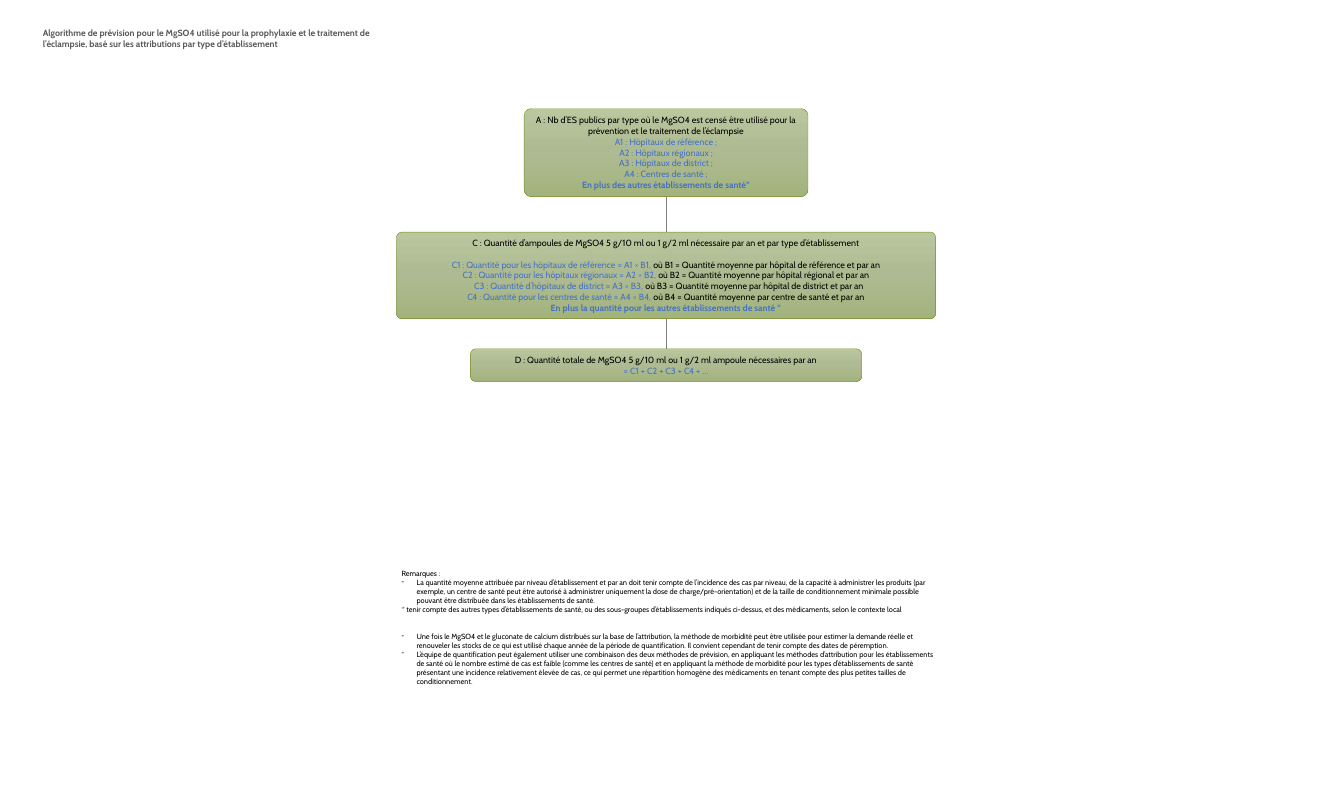
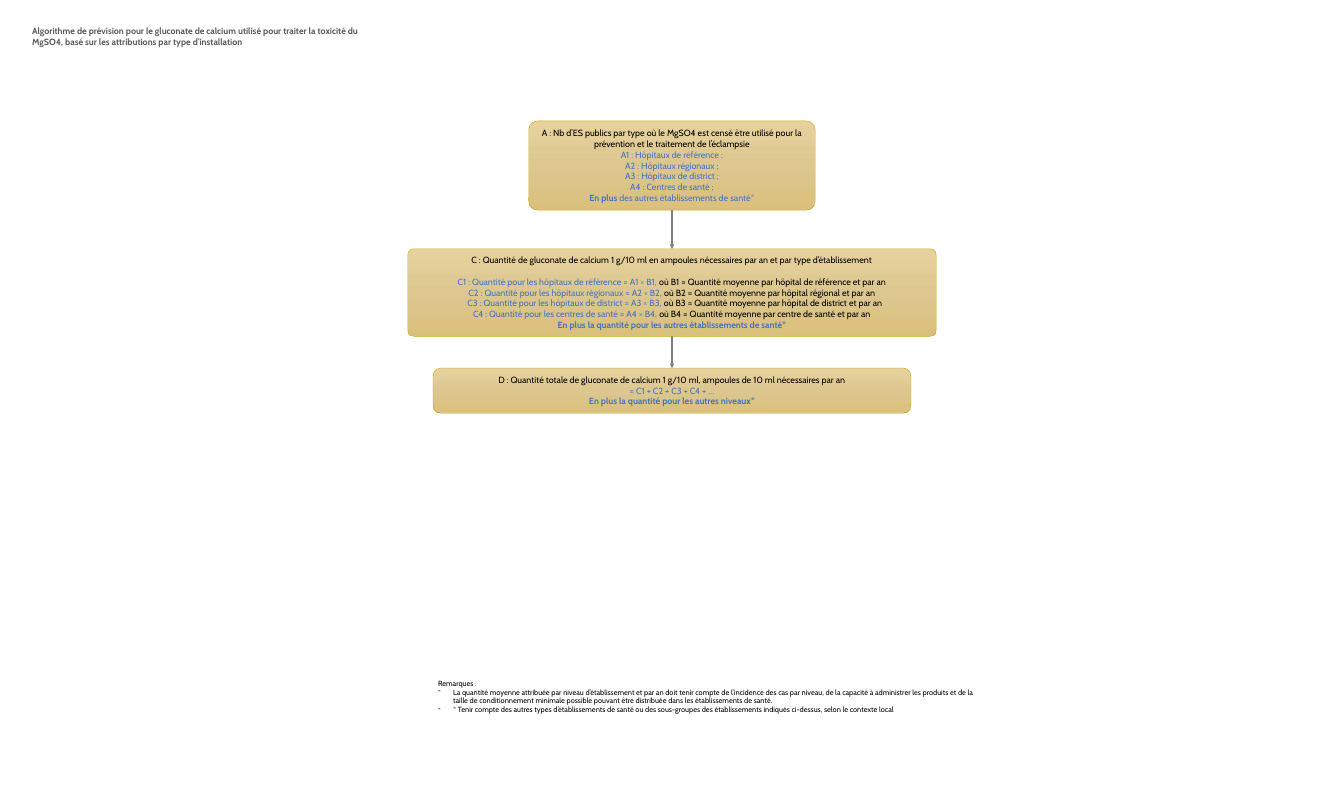
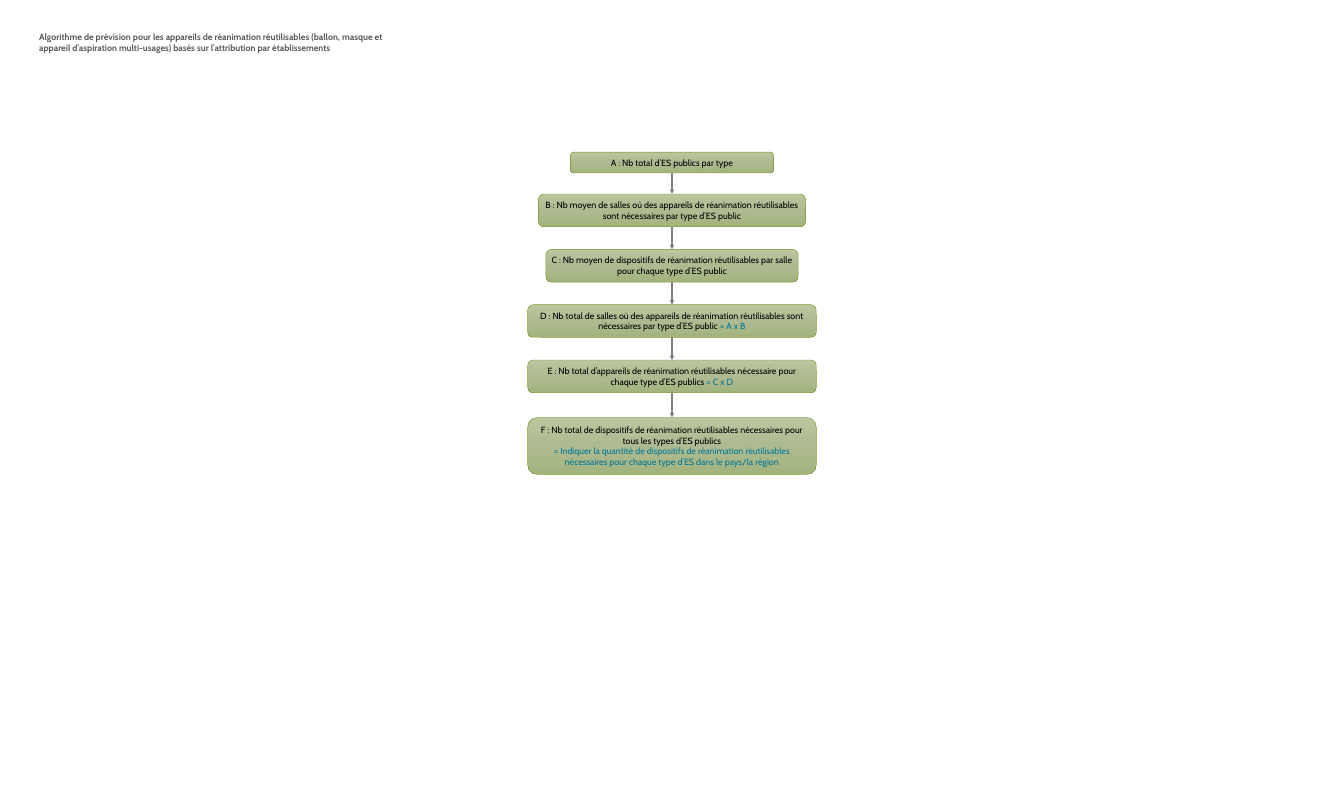
import copy

import pptx
import pptx.dml.color
import pptx.enum.shapes
import pptx.enum.text
import pptx.oxml.ns
import pptx.util
from lxml import etree

Inches, Pt = pptx.util.Inches, pptx.util.Pt
ALIGN = pptx.enum.text.PP_ALIGN
ANCHOR = pptx.enum.text.MSO_ANCHOR
qn = pptx.oxml.ns.qn

FONT = "Cabin"
HUES = {"ink": "000000", "blue": "4472C4", "teal": "007698",
        "title": "595959", "arrow": "808080"}
SKINS = {"green": (("BAC69E", "AEBB92", "A3B37D"), "788E1E"),
         "gold": (("E7D19D", "DDC790", "DAC07C"), "C2A204")}


def rgb(code):
    return pptx.dml.color.RGBColor.from_string(code)


def row(text, hue="ink", bold=False, **opts):
    return [(text, hue, bold)], opts


def mix(*runs, **opts):
    return [(*run, False)[:3] for run in runs], opts


class Deck:
    """Holds the deck style and the current slide."""

    def __init__(self):
        self.file = pptx.Presentation()
        self.file.slide_width = Inches(25)
        self.file.slide_height = Inches(15)

    def page(self, title, left, top, width):
        self.slide = self.file.slides.add_slide(self.file.slide_layouts[6])
        self.text(left, top, width, 0.5, [row(title, "title", True)], 12)

    def text(self, left, top, width, height, rows, size=10):
        box = self.slide.shapes.add_textbox(*map(Inches, (left, top, width, height)))
        self.typeset(box.text_frame, rows, size, ALIGN.LEFT)

    def typeset(self, frame, rows, size, align):
        frame.word_wrap = True
        for i, (runs, opts) in enumerate(rows):
            para = frame.paragraphs[0] if i == 0 else frame.add_paragraph()
            para.alignment = align
            para.space_before = Pt(opts.get("before", 0))
            para.space_after = Pt(opts.get("after", 0))
            para.font.name, para.font.size = FONT, Pt(size)
            for text, hue, bold in runs:
                run = para.add_run()
                run.text = text
                run.font.bold = bold
                run.font.color.rgb = rgb(HUES[hue])
            self.indent(para, opts)

    def indent(self, para, opts):
        props = para._p.get_or_add_pPr()
        if "left" in opts:
            props.set("marL", str(Inches(opts["left"])))
        if opts.get("dash"):
            props.set("marL", str(Inches(0.28)))
            props.set("indent", str(Inches(-0.28)))
            mark = etree.Element(qn("a:buChar"), char="-")
            props.find(qn("a:defRPr")).addprevious(mark)

    def box(self, mid, top, width, height, rows, skin, bend=0.17):
        shape = self.slide.shapes.add_shape(
            pptx.enum.shapes.MSO_SHAPE.ROUNDED_RECTANGLE,
            *map(Inches, (mid - width / 2, top, width, height)))
        shape.adjustments[0] = bend
        shape.shadow.inherit = False
        tones, edge = SKINS[skin]
        self.shade(shape.fill, shape._element.spPr, tones)
        shape.line.color.rgb = rgb(edge)
        shape.line.width = Pt(0.5)
        frame = shape.text_frame
        frame.vertical_anchor = ANCHOR.MIDDLE
        frame.margin_left = frame.margin_right = Inches(0.07)
        frame.margin_top = frame.margin_bottom = Inches(0.07)
        self.typeset(frame, rows, 12, ALIGN.CENTER)
        return shape

    def shade(self, fill, props, tones):
        fill.gradient()
        fill.gradient_angle = 270
        first = props.find(".//" + qn("a:gs"))
        first.addnext(copy.deepcopy(first))
        for i, (stop, tone) in enumerate(zip(fill.gradient_stops, tones)):
            stop.position = i / 2
            stop.color.rgb = rgb(tone)

    def link(self, upper, lower, head):
        line = self.slide.shapes.add_connector(
            pptx.enum.shapes.MSO_CONNECTOR.STRAIGHT, 0, 0, 0, 0)
        line.begin_connect(upper, 2)
        line.end_connect(lower, 0)
        line.line.color.rgb = rgb(HUES["arrow"])
        line.line.width = Pt(1.5)
        props = line._element.spPr
        if head:
            etree.SubElement(props.find(qn("a:ln")), qn("a:tailEnd"), type="triangle")
        etree.SubElement(props, qn("a:effectLst"))

    def chain(self, mid, steps, skin, head=True):
        boxes = [self.box(mid, *step[:4], skin, *step[4:]) for step in steps]
        for upper, lower in zip(boxes, boxes[1:]):
            self.link(upper, lower, head)


SITES = ["Hôpitaux de référence", "Hôpitaux régionaux",
         "Hôpitaux de district", "Centres de santé"]
MEANS = ["hôpital de référence", "hôpital régional",
         "hôpital de district", "centre de santé"]
SUM = row("= C1 + C2 + C3 + C4 + …", "blue")
NOTE = row("Remarques :")


def sites(last):
    head = row("A : Nb d’ES publics par type où le MgSO4 est censé être utilisé "
               "pour la prévention et le traitement de l’éclampsie")
    return [head, *(row(f"A{i} : {site} ;", "blue")
                    for i, site in enumerate(SITES, 1)), last]


def needs(head, kinds, last):
    rows = [row(head, after=14.5)]
    for i, (kind, mean) in enumerate(zip(kinds, MEANS), 1):
        opts = {"left": 0.11} if i == 3 else {}
        rows.append(mix((f"C{i} : Quantité {kind} = A{i} × B{i},", "blue"),
                        (f" où B{i} = Quantité moyenne par {mean} et par an", "ink"),
                        **opts))
    return [*rows, row(last, "blue", True)]


def sulfate(deck):
    deck.page("Algorithme de prévision pour le MgSO4 utilisé pour la prophylaxie et le "
              "traitement de l’éclampsie, basé sur les attributions par type "
              "d’établissement", 0.7, 0.47, 6.43)
    kinds = ["pour les hôpitaux de référence", "pour les hôpitaux régionaux",
             "d’hôpitaux de district", "pour les centres de santé"]
    deck.chain(12.39, [
        (2.02, 5.28, 1.64,
         sites(row("En plus des autres établissements de santé*", "blue", True)), 0.08),
        (4.32, 10.03, 1.61,
         needs("C : Quantité d’ampoules de MgSO4 5 g/10 ml ou 1 g/2 ml nécessaire "
               "par an et par type d’établissement", kinds,
               "En plus la quantité pour les autres établissements de santé *"), 0.06),
        (6.49, 7.28, 0.61,
         [row("D : Quantité totale de MgSO4 5 g/10 ml ou 1 g/2 ml ampoule "
              "nécessaires par an"), SUM]),
    ], "green", head=False)
    deck.text(7.37, 10.54, 10.25, 2.29, [
        NOTE,
        row("La quantité moyenne attribuée par niveau d’établissement et par an doit tenir "
            "compte de l’incidence des cas par niveau, de la capacité à administrer les "
            "produits (par exemple, un centre de santé peut être autorisé à administrer "
            "uniquement la dose de charge/pré-orientation) et de la taille de "
            "conditionnement minimale possible pouvant être distribuée dans les "
            "établissements de santé.", dash=True),
        row("* tenir compte des autres types d’établissements de santé, ou des sous-groupes "
            "d’établissements indiqués ci-dessus, et des médicaments, selon le contexte "
            "local"),
        row("Une fois le MgSO4 et le gluconate de calcium distribués sur la base de "
            "l’attribution, la méthode de morbidité peut être utilisée pour estimer la "
            "demande réelle et renouveler les stocks de ce qui est utilisé chaque année de "
            "la période de quantification. Il convient cependant de tenir compte des dates "
            "de péremption.", dash=True, before=24),
        row("L’équipe de quantification peut également utiliser une combinaison des deux "
            "méthodes de prévision, en appliquant les méthodes d’attribution pour les "
            "établissements de santé où le nombre estimé de cas est faible (comme les "
            "centres de santé) et en appliquant la méthode de morbidité pour les types "
            "d’établissements de santé présentant une incidence relativement élevée de cas, "
            "ce qui permet une répartition homogène des médicaments en tenant compte des "
            "plus petites tailles de conditionnement.", dash=True),
    ])


def calcium(deck):
    deck.page("Algorithme de prévision pour le gluconate de calcium utilisé pour traiter la "
              "toxicité du MgSO4, basé sur les attributions par type d’installation",
              0.5, 0.43, 6.37)
    kinds = [f"pour les {site[0].lower()}{site[1:]}" for site in SITES]
    deck.chain(12.5, [
        (2.25, 5.33, 1.66,
         sites(mix(("En plus", "blue", True),
                   (" des autres établissements de santé*", "blue"))), 0.1),
        (4.63, 9.83, 1.63,
         needs("C : Quantité de gluconate de calcium 1 g/10 ml en ampoules nécessaires "
               "par an et par type d’établissement", kinds,
               "En plus la quantité pour les autres établissements de santé*"), 0.07),
        (6.85, 8.89, 0.84,
         [row("D : Quantité totale de gluconate de calcium 1 g/10 ml, ampoules de 10 ml "
              "nécessaires par an"), SUM,
          row("En plus la quantité pour les autres niveaux*", "blue", True)]),
    ], "gold")
    deck.text(8.05, 12.58, 10.25, 0.94, [
        NOTE,
        row("La quantité moyenne attribuée par niveau d’établissement et par an doit tenir "
            "compte de l’incidence des cas par niveau, de la capacité à administrer les "
            "produits et de la taille de conditionnement minimale possible pouvant être "
            "distribuée dans les établissements de santé.", dash=True),
        row("* Tenir compte des autres types d’établissements de santé ou des sous-groupes "
            "des établissements indiqués ci-dessus, selon le contexte local", dash=True),
    ])


def devices(deck):
    deck.page("Algorithme de prévision pour les appareils de réanimation réutilisables "
              "(ballon, masque et appareil d’aspiration multi-usages) basés sur "
              "l’attribution par établissements", 0.63, 0.54, 7.17)
    deck.chain(12.5, [
        (2.83, 3.78, 0.39, [row("A : Nb total d’ES publics par type")]),
        (3.61, 4.97, 0.61,
         [row("B : Nb moyen de salles où des appareils de réanimation réutilisables sont "
              "nécessaires par type d’ES public")]),
        (4.64, 4.69, 0.61,
         [row("C : Nb moyen de dispositifs de réanimation réutilisables par salle pour "
              "chaque type d’ES public")]),
        (5.67, 5.37, 0.61,
         [mix(("D : Nb total de salles où des appareils de réanimation réutilisables sont "
               "nécessaires par type d’ES public ", "ink"), ("= A x B", "teal"))]),
        (6.7, 5.37, 0.61,
         [mix(("E : Nb total d’appareils de réanimation réutilisables nécessaire pour "
               "chaque type d’ES publics ", "ink"), ("= C x D", "teal"))]),
        (7.77, 5.37, 1.06,
         [row("F : Nb total de dispositifs de réanimation réutilisables nécessaires pour "
              "tous les types d’ES publics"),
          row("= Indiquer la quantité de dispositifs de réanimation réutilisables "
              "nécessaires pour chaque type d’ES dans le pays/la région", "teal")]),
    ], "green")


def main():
    deck = Deck()
    for draw in (sulfate, calcium, devices):
        draw(deck)
    deck.file.save("out.pptx")


if __name__ == "__main__":
    main()
